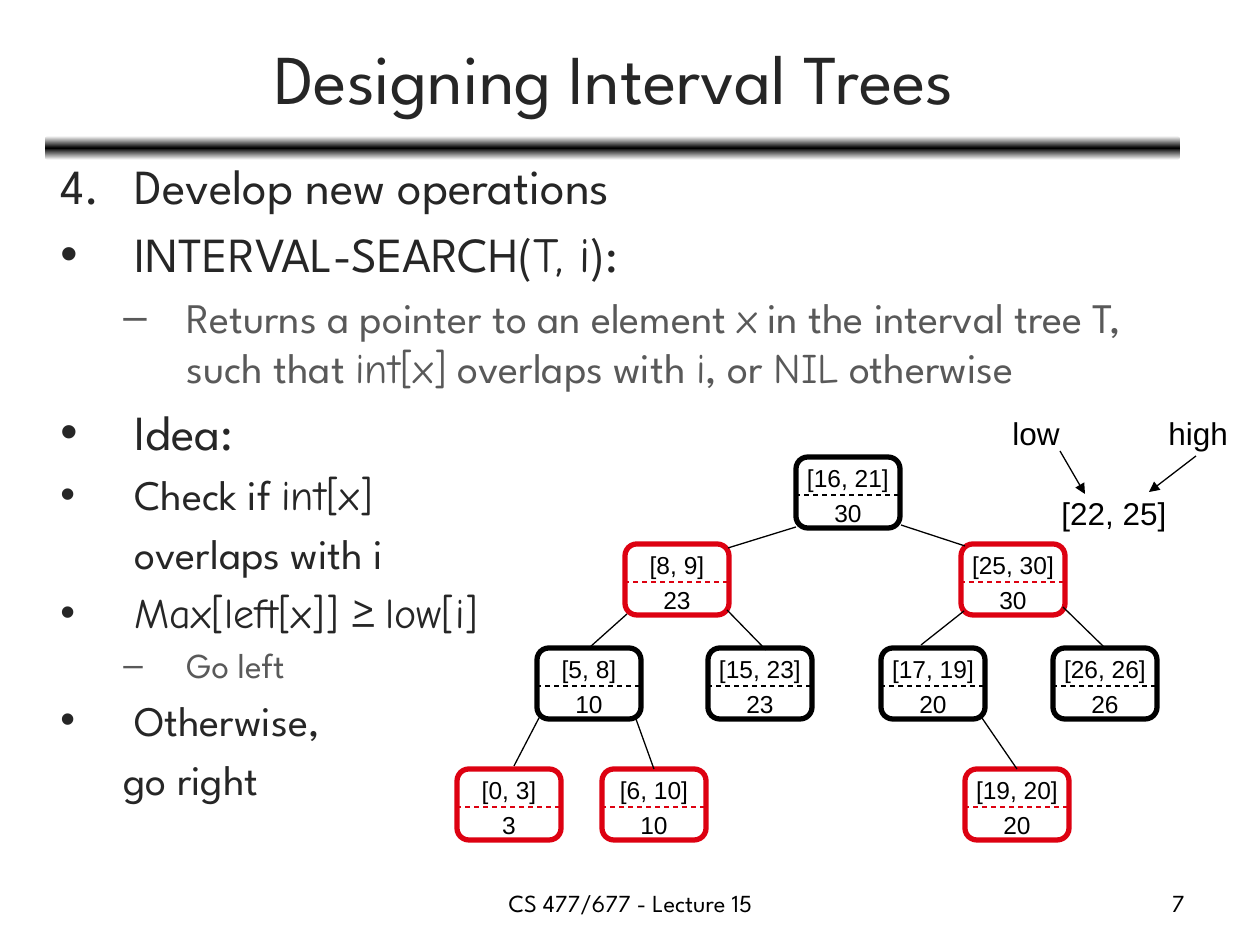
from copy import deepcopy

from lxml import etree
from pptx import Presentation, util as u
from pptx.dml.color import RGBColor
from pptx.enum import dml, shapes, text
from pptx.oxml.ns import qn

PX = 914400 / 126
SPARTAN, COMIC, ARIAL = "League Spartan", "Comic Neue", "Arial"
INK, GREY, BLACK, RED = "262626", "595959", "000000", "DD0111"
CENTER, RIGHT = text.PP_ALIGN.CENTER, text.PP_ALIGN.RIGHT


def px(*lengths):
    return [u.Emu(round(n * PX)) for n in lengths]


def color(hex_value):
    return RGBColor.from_string(hex_value)


def add_xml(parent, tag, **attributes):
    return etree.SubElement(parent, qn(tag), attributes)


def write(paragraph, content, size=14, font=ARIAL, ink=BLACK, align=None,
          spacing=None):
    """Write text; in content, parts between bars are set in Comic Neue."""
    paragraph.alignment = align
    paragraph.line_spacing = spacing
    for i, part in enumerate(content.split("|")):
        if part:
            run = paragraph.add_run()
            run.text = part
            run.font.size = u.Pt(size)
            run.font.name = COMIC if i % 2 else font
            run.font.color.rgb = color(ink)


def add_text(slide, box, content="", anchor=None, **style):
    frame = slide.shapes.add_textbox(*px(*box)).text_frame
    frame.word_wrap = True
    frame.vertical_anchor = anchor
    write(frame.paragraphs[0], content, **style)
    return frame


def add_line(parent, start, end, ink=BLACK, dashed=False, arrow=False):
    line = parent.shapes.add_connector(
        shapes.MSO_CONNECTOR.STRAIGHT, *px(*start, *end))
    line.line.color.rgb = color(ink)
    line.line.width = u.Pt(0.75)
    if dashed:
        line.line.dash_style = dml.MSO_LINE.DASH
    if arrow:
        add_xml(line.element.spPr.find(qn("a:ln")), "a:tailEnd",
                type="triangle")
    add_xml(line.element.spPr, "a:effectLst")
    return line


def add_header(slide, box):
    left, top, width, height = box
    # Gradient rule below the title
    rule = slide.shapes.add_shape(
        shapes.MSO_SHAPE.ROUNDED_RECTANGLE,
        *px(left - 2, top + 122, width + 1, 24))
    rule.shadow.inherit = False
    rule.line.fill.background()
    rule.fill.gradient()
    rule.fill.gradient_angle = 90
    stop_list = rule.element.spPr.find(".//" + qn("a:gsLst"))
    stop_list.append(deepcopy(stop_list[0]))
    for stop, place, ink in zip(rule.fill.gradient_stops, (0, 0.5, 1),
                                ("FFFFFF", BLACK, "FFFFFF")):
        stop.position = place
        stop.color.rgb = color(ink)
    # Title
    add_text(slide, box, "Designing Interval Trees", size=40, font=SPARTAN,
             ink=INK, align=CENTER, anchor=text.MSO_ANCHOR.MIDDLE)


# Bullet, left margin and hanging indent in px, size, colour, wording
OUTLINE = [
    ("4.", 74, 74, 28, INK, "Develop new operations"),
    ("•", 74, 74, 28, INK, "INTERVAL-SEARCH(|T, i|):"),
    ("–", 126, 63, 24, GREY,
     "Returns a pointer to an element |x| in the interval tree T, such that "
     "|int[x]| overlaps with |i|, or |NIL| otherwise"),
    ("•", 74, 74, 28, INK, "Idea:"),
    ("•", 74, 74, 24, INK, "Check if |int[x]"),
    ("", 74, 0, 24, INK, "overlaps with i"),
    ("•", 74, 74, 24, INK, "|Max[left[x]] |≥ |low[i]"),
    ("–", 126, 63, 20, GREY, "Go left"),
    ("•", 74, 74, 24, INK, "Otherwise,"),
    ("", 63, 0, 24, INK, "go right"),
]


def add_outline(slide, box):
    frame = add_text(slide, box)
    for i, (bullet, margin, hang, size, ink, content) in enumerate(OUTLINE):
        paragraph = frame.add_paragraph() if i else frame.paragraphs[0]
        write(paragraph, content, size=size, font=SPARTAN, ink=ink)
        paragraph.space_before = u.Pt(round(size * 0.2, 1))
        props = paragraph._p.get_or_add_pPr()
        props.set("marL", str(px(margin)[0]))
        props.set("indent", str(px(-hang)[0]))
        if bullet == "4.":
            add_xml(props, "a:buAutoNum", type="arabicPeriod", startAt="4")
        elif bullet:
            add_xml(props, "a:buFont", typeface=ARIAL)
            add_xml(props, "a:buChar", char=bullet)
        else:
            add_xml(props, "a:buNone")


# Interval: left, top (within the tree), maximum, colour
NODES = {
    "[16, 21]": (339, 0, 30, BLACK),
    "[25, 30]": (504, 87, 30, RED),
    "[26, 26]": (596, 191, 26, BLACK),
    "[17, 19]": (424, 191, 20, BLACK),
    "[19, 20]": (508, 312, 20, RED),
    "[8, 9]": (168, 87, 23, RED),
    "[15, 23]": (251, 191, 23, BLACK),
    "[5, 8]": (80, 191, 10, BLACK),
    "[6, 10]": (145, 312, 10, RED),
    "[0, 3]": (0, 312, 3, RED),
}
# Start, end, and the child whose top middle the edge joins
EDGES = [
    ((339, 70), (271, 91), None),
    ((444, 68), (508, 89), None),
    ((170, 157), (129, 191), "[5, 8]"),
    ((270, 153), (309, 193), None),
    ((507, 154), (464, 188), None),
    ((606, 150), (644, 191), "[26, 26]"),
    ((82, 261), (57, 309), None),
    ((179, 262), (199, 310), "[6, 10]"),
    ((525, 261), (561, 310), "[19, 20]"),
]


def add_node(slide, left, top, interval, maximum, ink):
    group = slide.shapes.add_group_shape()
    node = group.shapes.add_shape(shapes.MSO_SHAPE.ROUNDED_RECTANGLE,
                                  *px(left, top, 104, 71))
    node.shadow.inherit = False
    node.fill.background()
    node.line.color.rgb = color(ink)
    node.line.width = u.Pt(3)
    frame = node.text_frame
    frame.word_wrap = False
    frame.vertical_anchor = text.MSO_ANCHOR.MIDDLE
    write(frame.paragraphs[0], interval, align=CENTER, spacing=1.2)
    write(frame.add_paragraph(), str(maximum), align=CENTER, spacing=1.2)
    add_line(group, (left - 1, top + 38), (left + 105, top + 38), ink,
             dashed=True)
    return node


def add_tree(slide, box):
    left, top = box[:2]
    nodes = {interval: add_node(slide, left + x, top + y, interval, maximum, ink)
             for interval, (x, y, maximum, ink) in NODES.items()}
    for (x1, y1), (x2, y2), child in EDGES:
        edge = add_line(slide, (left + x1, top + y1), (left + x2, top + y2))
        if child:
            edge.end_connect(nodes[child], 0)


def add_legend(slide, box):
    left, top = box[:2]
    # Labels, each with room to stay on one line
    for x, y, width, label in ((49, 80, 140, "[22, 25]"),
                               (156, 0, 100, "high"), (0, 0, 90, "low")):
        add_text(slide, (left + x, top + y, width, 50), label, size=18)
    # Arrows from the labels to the interval
    for x1, y1, x2, y2 in ((196, 48, 149, 84), (60, 43, 85, 86)):
        add_line(slide, (left + x1, top + y1), (left + x2, top + y2),
                 arrow=True)


def add_footer(slide, box):
    left, top, width, height = box
    add_text(slide, (left, top, 399, height), "CS 477/677 - Lecture 15",
             font=SPARTAN, align=CENTER)
    add_text(slide, (left + width - 294, top, 294, height), "7",
             font=SPARTAN, align=RIGHT)


def main():
    deck = Presentation()
    deck.slide_width, deck.slide_height = px(1260, 945)
    slide = deck.slides.add_slide(deck.slide_layouts[6])
    add_header(slide, (47, 14, 1134, 125))
    add_outline(slide, (48, 149, 1128, 699))
    add_tree(slide, (457, 457, 699, 383))
    add_legend(slide, (1000, 408, 256, 130))
    add_footer(slide, (431, 882, 766, 44))
    deck.save("out.pptx")


if __name__ == "__main__":
    main()
